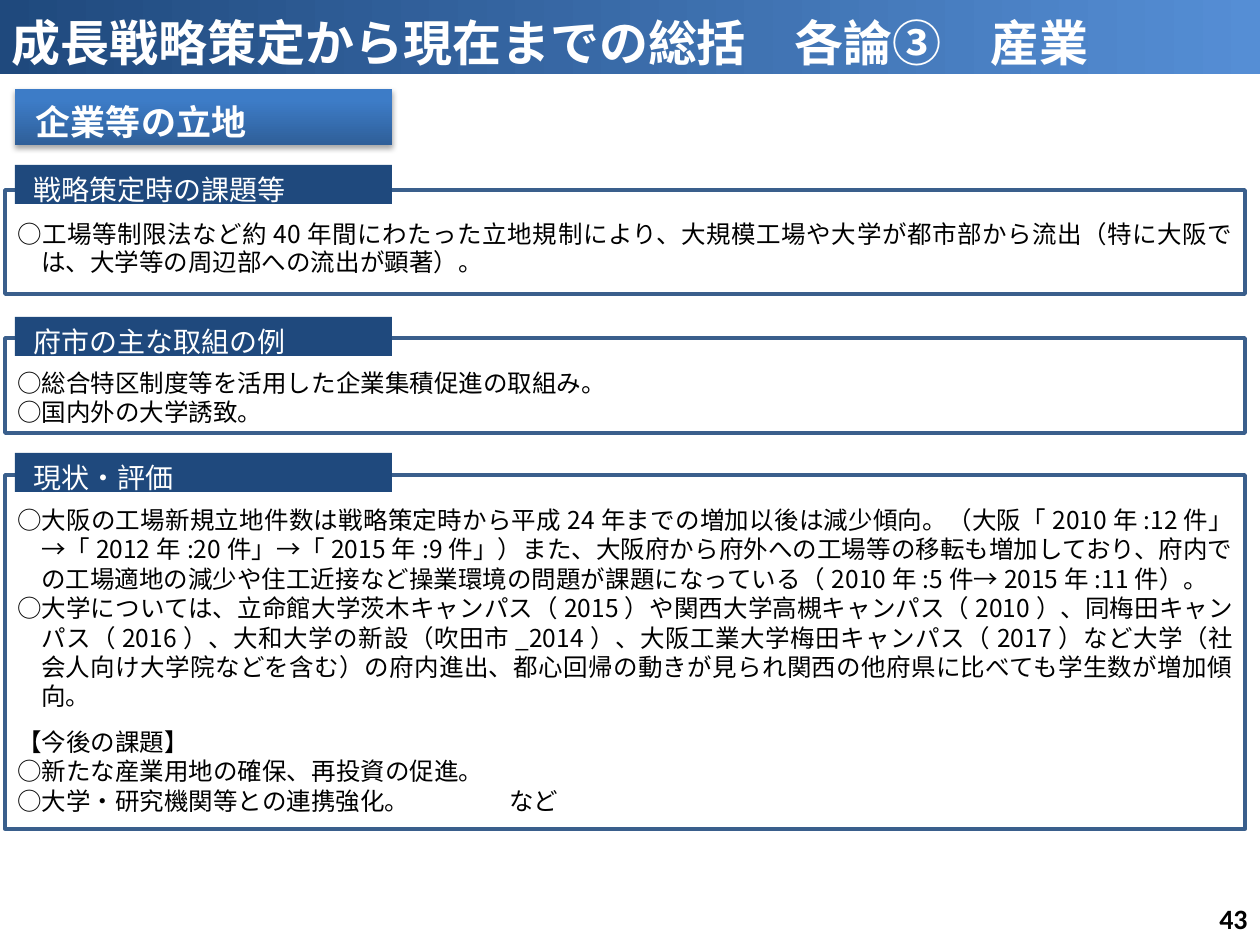
from lxml import etree
from pptx import Presentation
from pptx import util as u
from pptx.dml.color import RGBColor
from pptx.enum import shapes, text
from pptx.oxml import parse_xml
from pptx.oxml.ns import qn

PX = 914400 / 126
NAVY = RGBColor(0x1F, 0x49, 0x7D)
SKY = RGBColor(0x55, 0x8E, 0xD5)
STEEL = RGBColor(0x3A, 0x5F, 0x8C)
BUTTON_DARK = RGBColor(0x2F, 0x5F, 0x99)
BUTTON_LIGHT = RGBColor(0x3D, 0x7C, 0xC7)
WHITE = RGBColor(0xFF, 0xFF, 0xFF)
BLACK = RGBColor(0, 0, 0)
JAPANESE = "Noto Sans CJK JP"
DRAWING = "http://schemas.openxmlformats.org/drawingml/2006/main"
SHADOW = f"""<a:effectLst xmlns:a="{DRAWING}">
  <a:outerShdw blurRad="39370" dist="22860" dir="5400000" rotWithShape="0">
    <a:srgbClr val="000000"><a:alpha val="35000"/></a:srgbClr>
  </a:outerShdw>
</a:effectLst>"""

SECTIONS = [
    {
        "frame": (5, 190, 1240, 104),
        "label": (15, 165, 377, 39),
        "heading": "戦略策定時の課題等",
        "hanging": 24,
        "items": [
            ("○工場等制限法など約40年間にわたった立地規制により、大規模工場や大学が都市部から流出"
             "（特に大阪では、大学等の周辺部への流出が顕著）。", 16),
        ],
    },
    {
        "frame": (5, 338, 1240, 95),
        "label": (15, 317, 377, 39),
        "heading": "府市の主な取組の例",
        "hanging": 0,
        "items": [
            ("○総合特区制度等を活用した企業集積促進の取組み。", None),
            ("○国内外の大学誘致。", None),
        ],
    },
    {
        "frame": (5, 475, 1240, 354),
        "label": (15, 453, 377, 39),
        "heading": "現状・評価",
        "hanging": 24,
        "items": [
            ("○大阪の工場新規立地件数は戦略策定時から平成24年までの増加以後は減少傾向。"
             "（大阪「2010年:12件」→「2012年:20件」→「2015年:9件」）また、大阪府から府外への"
             "工場等の移転も増加しており、府内での工場適地の減少や住工近接など操業環境の問題が"
             "課題になっている（2010年:5件→2015年:11件）。", None),
            ("○大学については、立命館大学茨木キャンパス（2015）や関西大学高槻キャンパス（2010）、"
             "同梅田キャンパス（2016）、大和大学の新設（吹田市_2014）、大阪工業大学梅田キャンパス"
             "（2017）など大学（社会人向け大学院などを含む）の府内進出、都心回帰の動きが見られ"
             "関西の他府県に比べても学生数が増加傾向。", None),
            ("【今後の課題】", 26),
            ("○新たな産業用地の確保、再投資の促進。", None),
            ("○大学・研究機関等との連携強化。\tなど", None),
        ],
    },
]


def px(length):
    """Turn pixels into EMU."""
    return u.Emu(round(length * PX))


def add_box(slide, kind, box, insets, anchor):
    """Add a plain shape with the given text insets."""
    shape = slide.shapes.add_shape(kind, *map(px, box))
    shape.shadow.inherit = False
    shape.line.fill.background()
    frame = shape.text_frame
    frame.word_wrap = True
    frame.vertical_anchor = anchor
    frame.margin_left, frame.margin_top, frame.margin_right, frame.margin_bottom = map(px, insets)
    return shape


def style(paragraph, size, color, bold=False, name=JAPANESE, align=text.PP_ALIGN.LEFT):
    """Set the alignment and font of a paragraph."""
    paragraph.alignment = align
    font = paragraph.font
    font.size, font.bold, font.name = u.Pt(size), bold, name
    font.color.rgb = color
    defaults = paragraph._p.pPr.find(qn("a:defRPr"))
    etree.SubElement(defaults, qn("a:ea")).set("typeface", name)


def set_gradient(shape, angle, stops):
    """Fill a shape with a two-stop linear gradient."""
    shape.fill.gradient()
    shape.fill.gradient_angle = angle
    for stop, (position, color) in zip(shape.fill.gradient_stops, stops):
        stop.position, stop.color.rgb = position, color


def add_banner(slide, box, wording, size, insets):
    """Add a bar with one line of bold white text."""
    shape = add_box(slide, shapes.MSO_SHAPE.RECTANGLE, box, insets, text.MSO_ANCHOR.MIDDLE)
    paragraph = shape.text_frame.paragraphs[0]
    paragraph.text = wording
    style(paragraph, size, WHITE, bold=True)
    return shape


def add_title(slide, box):
    """Add the title bar."""
    shape = add_banner(slide, box, "成長戦略策定から現在までの総括　各論③　産業", 28, (12, 15, 12, 6))
    set_gradient(shape, 0, [(0, NAVY), (1, SKY)])


def add_topic(slide, box):
    """Add the raised topic button."""
    shape = add_banner(slide, box, "企業等の立地", 20, (21, 9, 13, 0))
    set_gradient(shape, 90, [(0, BUTTON_DARK), (0.8, BUTTON_LIGHT)])
    properties = shape._element.spPr
    properties.replace(properties.find(qn("a:effectLst")), parse_xml(SHADOW))


def indent_item(paragraph, hanging):
    """Give an item its tab stop or its hanging indent."""
    properties = paragraph._p.get_or_add_pPr()
    if "\t" in paragraph.text:
        tabs = etree.SubElement(properties, qn("a:tabLst"))
        etree.SubElement(tabs, qn("a:tab"), pos=str(px(492)), algn="l")
    elif hanging:
        properties.set("marL", str(px(hanging)))
        properties.set("indent", str(-px(hanging)))


def add_section(slide, frame, label, heading, hanging, items):
    """Add an outlined panel of items with its heading label."""
    panel = add_box(slide, shapes.MSO_SHAPE.ROUNDED_RECTANGLE, frame, (12, 30, 12, 6),
                    text.MSO_ANCHOR.TOP)
    panel.adjustments[0] = 0
    panel.fill.background()
    panel.line.color.rgb = STEEL
    panel.line.width = u.Pt(2)
    body = panel.text_frame
    for index, (wording, spacing) in enumerate(items):
        paragraph = body.add_paragraph() if index else body.paragraphs[0]
        paragraph.text = wording
        if spacing:
            paragraph.line_spacing = u.Pt(spacing)
        indent_item(paragraph, hanging)
        style(paragraph, 14, BLACK, align=text.PP_ALIGN.JUSTIFY)
    tag = add_box(slide, shapes.MSO_SHAPE.RECTANGLE, label, (19, 10, 13, 0),
                  text.MSO_ANCHOR.MIDDLE)
    tag.fill.solid()
    tag.fill.fore_color.rgb = NAVY
    paragraph = tag.text_frame.paragraphs[0]
    paragraph.text = heading
    style(paragraph, 16, WHITE)


def add_page_number(slide, box):
    """Add the page number."""
    frame = slide.shapes.add_textbox(*map(px, box)).text_frame
    frame.word_wrap = True
    frame.vertical_anchor = text.MSO_ANCHOR.MIDDLE
    paragraph = frame.paragraphs[0]
    paragraph.text = "43"
    style(paragraph, 16, BLACK, bold=True, name="Calibri", align=text.PP_ALIGN.RIGHT)


def main():
    """Build and save the slide."""
    presentation = Presentation()
    presentation.slide_width, presentation.slide_height = px(1260), px(945)
    slide = presentation.slides.add_slide(presentation.slide_layouts[6])
    add_title(slide, (0, 0, 1260, 74))
    add_topic(slide, (15, 89, 377, 56))
    for section in SECTIONS:
        add_section(slide, **section)
    add_page_number(slide, (966, 893, 294, 50))
    presentation.save("out.pptx")


if __name__ == "__main__":
    main()
